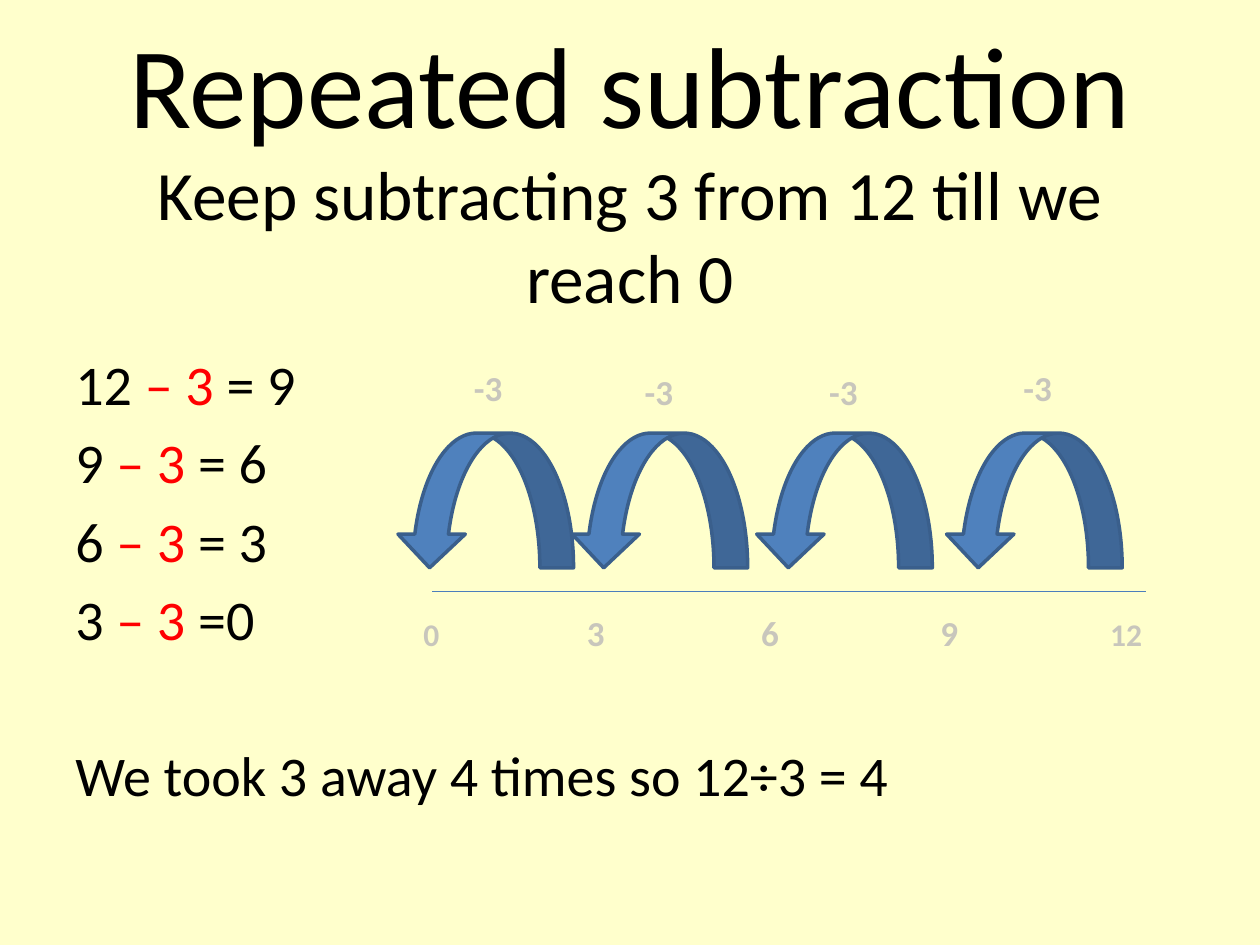
import pptx
import pptx.util
import pptx.dml.color
import pptx.enum.shapes
import pptx.enum.text
import pptx.oxml.ns
import lxml.etree

Pt = pptx.util.Pt
RGB = pptx.dml.color.RGBColor
ALIGN = pptx.enum.text.PP_ALIGN
ANCHOR = pptx.enum.text.MSO_ANCHOR

CREAM = RGB(0xFF, 0xFF, 0xCC)
BLACK = RGB(0, 0, 0)
RED = RGB(0xFF, 0, 0)
BLUE = RGB(0x4F, 0x81, 0xBD)
EDGE = RGB(0x3A, 0x5F, 0x8C)
AXIS = RGB(0x4B, 0x7E, 0xBC)
PALE = RGB(0xC8, 0xC6, 0xBC)


def add_text(s, box, paragraphs, size=32, color=BLACK, bold=False, align=ALIGN.LEFT,
             anchor=ANCHOR.TOP, before=0, wrap=True):
    tf = s.shapes.add_textbox(*map(Pt, box)).text_frame
    tf.word_wrap = wrap
    tf.vertical_anchor = anchor
    for i, runs in enumerate(paragraphs):
        p = tf.paragraphs[0] if i == 0 else tf.add_paragraph()
        p.alignment = align
        p.space_before = Pt(before)
        for text, fmt in runs:
            r = p.add_run()
            r.text = text
            r.font.name = "Calibri"
            r.font.size = Pt(fmt.get("size", size))
            r.font.bold = bold
            r.font.color.rgb = fmt.get("color", color)
    return tf


def add_title(s, box):
    add_text(s, box, [[("Repeated subtraction", {"size": 65.7})],
                      [("Keep subtracting 3 from 12 till we reach 0", {})]],
             size=39.6, align=ALIGN.CENTER, anchor=ANCHOR.MIDDLE)


def add_working(s, box):
    steps = [("12 ", "– 3", " = 9"), ("9 ", "– 3 ", "= 6"),
             ("6 ", "– 3 ", "= 3"), ("3 ", "– 3 ", "=0")]
    lines = [[(start, {}), (taken, {"color": RED}), (left, {})] for start, taken, left in steps]
    lines.append([("We took 3 away 4 times so 12÷3 = 4", {})])
    tf = add_text(s, box, lines, before=6.4)
    tf.paragraphs[-1].space_before = Pt(51)


def add_label(s, text, cx, cy, size):
    w, h = 50, 30
    add_text(s, (cx - w / 2, cy - h / 2, w, h), [[(text, {})]], size=size, color=PALE, bold=True,
             align=ALIGN.CENTER, anchor=ANCHOR.MIDDLE, wrap=False)


def add_jump(s, cx, cy):
    w, h = 77, 101.5
    sp = s.shapes.add_shape(pptx.enum.shapes.MSO_SHAPE.CURVED_RIGHT_ARROW,
                            Pt(cx - w / 2), Pt(cy - h / 2), Pt(w), Pt(h))
    sp.rotation = 90
    sp.shadow.inherit = False
    sp.fill.solid()
    sp.fill.fore_color.rgb = BLUE
    sp.line.color.rgb = EDGE
    sp.line.width = Pt(2)


def add_number_line(s, box):
    x, y, w, h = box
    axis_y = y + 122
    line = s.shapes.add_connector(pptx.enum.shapes.MSO_CONNECTOR.STRAIGHT,
                                  Pt(x + 20), Pt(axis_y), Pt(x + w), Pt(axis_y))
    line.line.color.rgb = AXIS
    line.line.width = Pt(0.75)
    lxml.etree.SubElement(line._element.spPr, pptx.oxml.ns.qn("a:effectLst"))
    for cx, label_cx, label_cy in [(50, 52, 5.5), (149.5, 149.5, 7.5),
                                   (255, 255, 7.5), (363.5, 366, 5.5)]:
        add_jump(s, x + cx, y + 70)
        add_label(s, "-3", x + label_cx, y + label_cy, 20)
    for text, cx, rise, size in [("0", 19.5, 10.5, 18), ("3", 113.5, 11.5, 20),
                                 ("6", 213, 11.5, 20), ("9", 315.5, 11.5, 20),
                                 ("12", 416.5, 10.5, 18)]:
        add_label(s, text, x + cx, y + h - rise, size)


def main():
    prs = pptx.Presentation()
    prs.slide_width, prs.slide_height = Pt(720), Pt(540)
    s = prs.slides.add_slide(prs.slide_layouts[6])
    s.background.fill.solid()
    s.background.fill.fore_color.rgb = CREAM
    add_title(s, (36, 21.6, 648, 146))
    add_working(s, (36, 196, 648, 286))
    add_number_line(s, (227, 216, 428, 157))
    prs.save("out.pptx")


if __name__ == "__main__":
    main()
